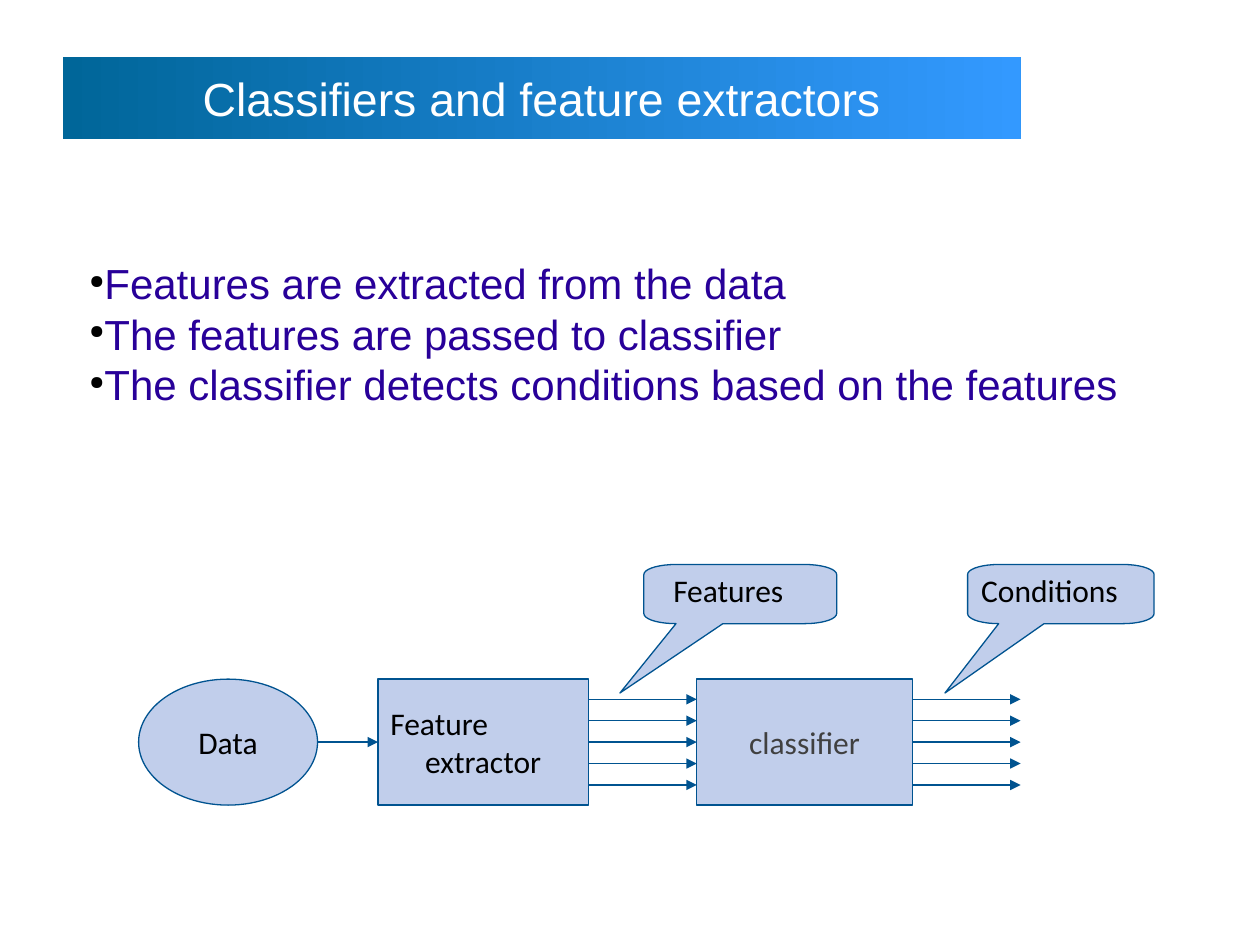
from dataclasses import dataclass
from math import cos, radians, sin

from pptx import Presentation
from pptx import util as u
from pptx.dml.color import RGBColor
from pptx.enum import shapes, text
from pptx.oxml import ns, xmlchemy


@dataclass(frozen=True)
class Theme:
    """Colours, fonts and type sizes of the slide."""
    banner_dark: str = "006699"
    banner_light: str = "3399FF"
    white: str = "FFFFFF"
    black: str = "000000"
    grey: str = "404040"
    bullet_text: str = "280099"
    fill: str = "C1CEEB"
    line: str = "005390"
    heading_font: str = "Arial"
    label_font: str = "Calibri"
    title_size: float = 26.5
    bullet_size: float = 24
    label_size: float = 18
    line_width: float = 0.75


THEME = Theme()
PADDING = (0.1, 0.05, 0.1, 0.05)


def rgb(value):
    """Turn a hex string into a colour."""
    return RGBColor.from_string(value)


def make_element(parent, tag, **attributes):
    """Append a drawing element with the given attributes."""
    element = xmlchemy.OxmlElement(tag)
    for name, value in attributes.items():
        element.set(name, value)
    parent.append(element)
    return element


def set_frame(box, insets, anchor, wrap=True):
    """Set the insets, anchor and wrapping of a box and return its frame."""
    frame = box.text_frame
    (frame.margin_left, frame.margin_top,
     frame.margin_right, frame.margin_bottom) = map(u.Inches, insets)
    frame.vertical_anchor = anchor
    frame.word_wrap = wrap
    return frame


def style_runs(para, font, size, colour):
    """Format every run of a paragraph."""
    for span in para.runs:
        span.font.name = font
        span.font.size = u.Pt(size)
        span.font.color.rgb = rgb(colour)


def style_node(box, lines, colour, anchor, wrap=False):
    """Paint a diagram shape and write its (text, alignment) lines."""
    box.shadow.inherit = False
    box.fill.solid()
    box.fill.fore_color.rgb = rgb(THEME.fill)
    box.line.color.rgb = rgb(THEME.line)
    box.line.width = u.Pt(THEME.line_width)
    frame = set_frame(box, PADDING, anchor, wrap)
    for index, (line, alignment) in enumerate(lines):
        para = frame.add_paragraph() if index else frame.paragraphs[0]
        para.text = line
        para.alignment = alignment
        style_runs(para, THEME.label_font, THEME.label_size, colour)


def add_title(page, left, top, width, height):
    """Add the gradient banner with the slide title."""
    box = page.shapes.add_shape(
        shapes.MSO_SHAPE.RECTANGLE, *map(u.Inches, (left, top, width, height)))
    box.shadow.inherit = False
    box.line.fill.background()
    box.fill.gradient()
    box.fill.gradient_angle = 0
    for stop, colour in zip(box.fill.gradient_stops,
                            (THEME.banner_dark, THEME.banner_light)):
        stop.color.rgb = rgb(colour)
    frame = set_frame(box, (0, 0, 0, 0), text.MSO_ANCHOR.MIDDLE)
    frame.text = "Classifiers and feature extractors"
    para = frame.paragraphs[0]
    para.alignment = text.PP_ALIGN.CENTER
    style_runs(para, THEME.heading_font, THEME.title_size, THEME.white)


def add_bullets(page, left, top, width, height):
    """Add the three bullet points."""
    box = page.shapes.add_textbox(*map(u.Inches, (left, top, width, height)))
    frame = set_frame(box, (0, 0, 0, 0), text.MSO_ANCHOR.MIDDLE)
    frame.text = "\n".join((
        "Features are extracted from the data",
        "The features are passed to classifier",
        "The classifier detects conditions based on the features",
    ))
    for para in frame.paragraphs:
        properties = para._p.get_or_add_pPr()
        properties.set("marL", "0")
        properties.set("indent", "0")
        bullet_colour = make_element(properties, "a:buClr")
        make_element(bullet_colour, "a:srgbClr", val=THEME.black)
        make_element(properties, "a:buSzPct", val="45000")
        make_element(properties, "a:buChar", char="●")
        style_runs(para, THEME.heading_font, THEME.bullet_size, THEME.bullet_text)


def add_arrow(page, start_x, end_x, y, source=None, target=None):
    """Add a horizontal arrow, joined to rectangles where they are given."""
    arrow = page.shapes.add_connector(
        shapes.MSO_CONNECTOR.STRAIGHT, *map(u.Inches, (start_x, y, end_x, y)))
    if source is not None:
        arrow.begin_connect(source, 3)
    if target is not None:
        arrow.end_connect(target, 1)
    arrow.line.color.rgb = rgb(THEME.line)
    arrow.line.width = u.Pt(THEME.line_width)
    properties = arrow._element.spPr
    make_element(properties.find(ns.qn("a:ln")), "a:tailEnd", type="triangle")
    make_element(properties, "a:effectLst")


def add_arrow_bundle(page, start_x, end_x, middle_y, source, target=None):
    """Add five parallel arrows, the middle one joined to its rectangles."""
    for step in range(-2, 3):
        ends = {} if step else {"source": source, "target": target}
        add_arrow(page, start_x, end_x, middle_y + 0.17 * step, **ends)


def add_callout(page, left, top, width, height, tip_x, tip_y, label):
    """Add a rounded callout whose tail ends at the tip."""
    radius_x, radius_y = width / 6, 0.08
    near, far = left + radius_x, left + width - radius_x
    upper, lower = top + radius_y, top + height - radius_y

    def corner(x, y, start):
        return [(x + radius_x * cos(radians(start - turn)),
                 y + radius_y * sin(radians(start - turn)))
                for turn in range(0, 91, 10)]

    outline = (corner(near, upper, 270) + corner(near, lower, 180)
               + [(tip_x, tip_y), (left + 0.41 * width, top + height)]
               + corner(far, lower, 90) + corner(far, upper, 0))
    points = [(u.Inches(x), u.Inches(y)) for x, y in outline]
    builder = page.shapes.build_freeform(*points[0])
    builder.add_line_segments(points[1:], close=True)
    style_node(builder.convert_to_shape(), [(label, text.PP_ALIGN.CENTER)],
               THEME.black, text.MSO_ANCHOR.TOP, wrap=True)


def add_diagram(page, left, top, height):
    """Add the flow from data through the extractor to the classifier."""
    center = text.PP_ALIGN.CENTER
    oval, rectangle = shapes.MSO_SHAPE.OVAL, shapes.MSO_SHAPE.RECTANGLE
    nodes = (
        (oval, 0, 1.42, [("Data", center)], THEME.black, False),
        (rectangle, 1.9, 1.67,
         [("Feature", text.PP_ALIGN.LEFT), ("extractor", center)], THEME.black, True),
        (rectangle, 4.43, 1.71, [("classifier", center)], THEME.grey, False),
    )
    boxes = []
    for kind, offset, width, lines, colour, wrap in nodes:
        box = page.shapes.add_shape(
            kind, *map(u.Inches, (left + offset, top, width, height)))
        style_node(box, lines, colour, text.MSO_ANCHOR.MIDDLE, wrap)
        boxes.append(box)
    data, extractor, classifier = boxes
    middle = top + height / 2
    add_arrow(page, left + 1.42, left + 1.9, middle, target=extractor)
    add_arrow_bundle(page, left + 3.57, left + 4.43, middle, extractor, classifier)
    add_arrow_bundle(page, left + 6.14, left + 7, middle, classifier)
    for offset, width, tip, label in ((4.01, 1.53, 3.82, "Features"),
                                      (6.58, 1.48, 6.4, "Conditions")):
        add_callout(page, left + offset, top - 0.91, width, 0.47,
                    left + tip, top + 0.11, label)


def main():
    """Build the slide and save it."""
    deck = Presentation()
    deck.slide_width, deck.slide_height = u.Inches(10), u.Inches(7.5)
    page = deck.slides.add_slide(deck.slide_layouts[6])
    add_bullets(page, 0.71, 1.79, 8.79, 1.71)
    add_title(page, 0.5, 0.45, 7.6, 0.65)
    add_diagram(page, 1.1, 5.39, 1)
    deck.save("out.pptx")


if __name__ == "__main__":
    main()
